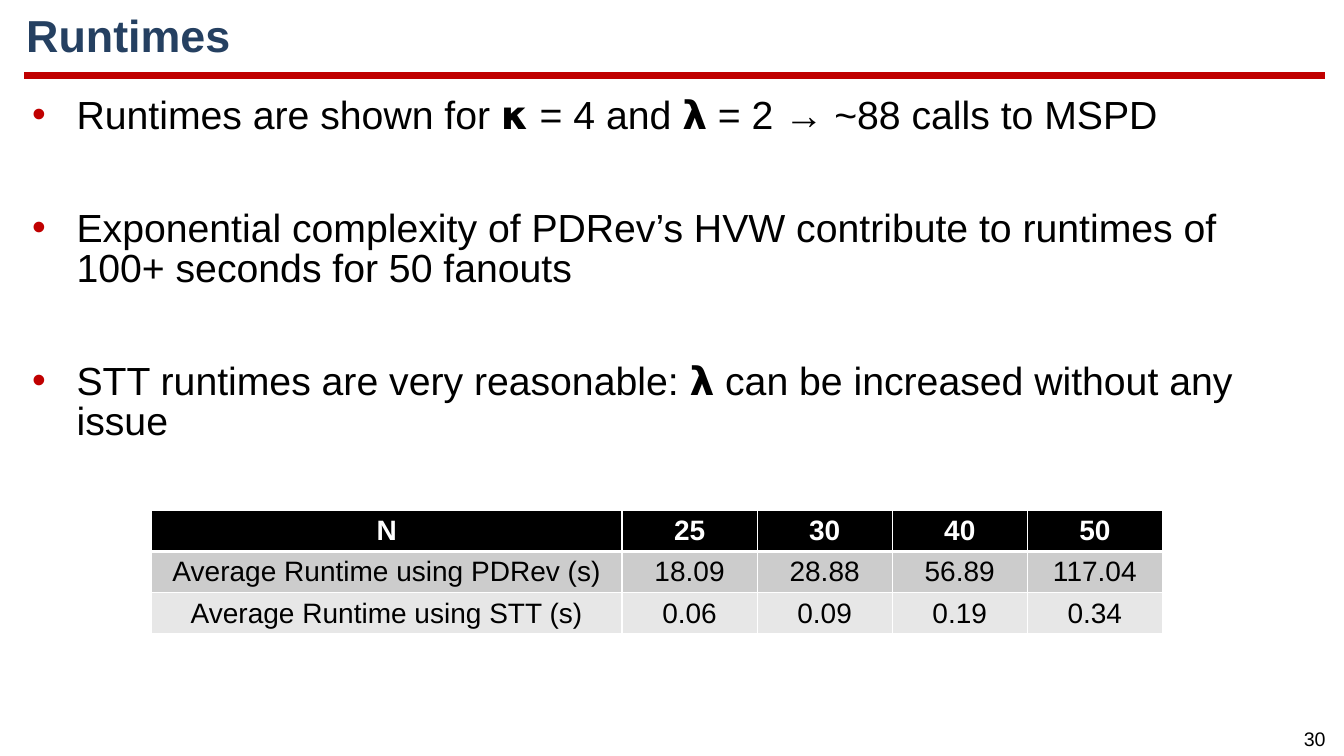
"""Build the runtimes slide with bullets and a runtime table."""
from lxml.etree import SubElement
from pptx import Presentation
from pptx.dml.color import RGBColor
from pptx.enum.shapes import MSO_CONNECTOR
from pptx.enum.text import MSO_ANCHOR, MSO_AUTO_SIZE, PP_ALIGN
from pptx.oxml.ns import qn
from pptx.util import Inches, Pt

TITLE = "Runtimes"
BULLETS = [
    "Runtimes are shown for 𝝹 = 4 and 𝝺 = 2 → ~88 calls to MSPD",
    "Exponential complexity of PDRev’s HVW contribute to runtimes of 100+ seconds for 50 fanouts",
    "STT runtimes are very reasonable: 𝝺 can be increased without any issue",
]
RUNTIMES = [
    ("N", "25", "30", "40", "50"),
    ("Average Runtime using PDRev (s)", "18.09", "28.88", "56.89", "117.04"),
    ("Average Runtime using STT (s)", "0.06", "0.09", "0.19", "0.34"),
]
ROW_FILLS = ["000000", "CCCCCC", "E7E7E7"]
COLUMN_WIDTHS = [4.67] + [1.34] * 4
ROW_HEIGHT = 0.41
PAGE_NUMBER = "30"
RED, NAVY, BLACK, WHITE = "C00000", "254061", "000000", "FFFFFF"


def color(value):
    return RGBColor.from_string(value)


def add_text(paragraph, text, size, text_color, bold=False):
    run = paragraph.add_run()
    run.text = text
    font = run.font
    font.name, font.size, font.bold = "Arial", Pt(size), bold
    font.color.rgb = color(text_color)


def place(shape, left, top, width, height):
    shape.left, shape.top = Inches(left), Inches(top)
    shape.width, shape.height = Inches(width), Inches(height)


def add_bullet(paragraph):
    properties = paragraph._p.get_or_add_pPr()
    properties.set("marL", str(Inches(0.5)))
    properties.set("indent", str(Inches(-0.44)))
    bullet_color = SubElement(properties, qn("a:buClr"))
    SubElement(bullet_color, qn("a:srgbClr"), val=RED)
    SubElement(properties, qn("a:buFont"), typeface="Arial")
    SubElement(properties, qn("a:buChar"), char="•")


def add_borders(cell, bottom_width):
    properties = cell._tc.get_or_add_tcPr()
    for side, width in (("L", 1), ("R", 1), ("T", 1), ("B", bottom_width)):
        border = SubElement(properties, qn(f"a:ln{side}"), w=str(Pt(width)))
        fill = SubElement(border, qn("a:solidFill"))
        SubElement(fill, qn("a:srgbClr"), val=WHITE)


def add_title(slide):
    title = slide.shapes.title
    place(title, 0.16, 0.11, 12.7, 0.54)
    frame = title.text_frame
    frame.auto_size = MSO_AUTO_SIZE.NONE
    frame.vertical_anchor = MSO_ANCHOR.MIDDLE
    paragraph = frame.paragraphs[0]
    paragraph.alignment = PP_ALIGN.LEFT
    paragraph.line_spacing = 0.9
    add_text(paragraph, TITLE, 32, NAVY, bold=True)
    rule = slide.shapes.add_connector(
        MSO_CONNECTOR.STRAIGHT, Inches(0.24), Inches(0.75), Inches(13.14), Inches(0.75))
    rule.line.color.rgb = color(RED)
    rule.line.width = Pt(4.5)
    SubElement(rule._element.spPr, qn("a:effectLst"))


def add_bullets(slide):
    body = slide.placeholders[1]
    place(body, 0.16, 0.92, 12.88, 3.95)
    frame = body.text_frame
    frame.auto_size = MSO_AUTO_SIZE.NONE
    frame.vertical_anchor = MSO_ANCHOR.TOP
    for index, text in enumerate(BULLETS):
        paragraph = frame.add_paragraph() if index else frame.paragraphs[0]
        add_bullet(paragraph)
        paragraph.line_spacing = 0.85
        paragraph.space_before = Pt(52 if index else 0)
        add_text(paragraph, text, 28, BLACK)


def add_runtime_table(slide):
    table = slide.shapes.add_table(
        len(RUNTIMES), len(COLUMN_WIDTHS), Inches(1.5), Inches(5.06),
        Inches(sum(COLUMN_WIDTHS)), Inches(ROW_HEIGHT * len(RUNTIMES))).table
    for column, width in zip(table.columns, COLUMN_WIDTHS):
        column.width = Inches(width)
    for row_index, (values, fill) in enumerate(zip(RUNTIMES, ROW_FILLS)):
        header = row_index == 0
        table.rows[row_index].height = Inches(ROW_HEIGHT)
        for column_index, value in enumerate(values):
            cell = table.cell(row_index, column_index)
            add_borders(cell, 3 if header else 1)
            cell.fill.solid()
            cell.fill.fore_color.rgb = color(fill)
            cell.vertical_anchor = MSO_ANCHOR.MIDDLE
            paragraph = cell.text_frame.paragraphs[0]
            paragraph.alignment = PP_ALIGN.CENTER
            add_text(paragraph, value, 20, WHITE if header else BLACK, bold=header)


def add_page_number(slide):
    box = slide.shapes.add_textbox(Inches(12.87), Inches(7.16), Inches(0.34), Inches(0.34))
    frame = box.text_frame
    frame.word_wrap = True
    frame.margin_left = frame.margin_right = Inches(0.05)
    paragraph = frame.paragraphs[0]
    paragraph.alignment = PP_ALIGN.CENTER
    add_text(paragraph, PAGE_NUMBER, 14, BLACK)


def main():
    presentation = Presentation()
    presentation.slide_width, presentation.slide_height = Inches(13.33), Inches(7.5)
    slide = presentation.slides.add_slide(presentation.slide_layouts[1])
    add_title(slide)
    add_bullets(slide)
    add_runtime_table(slide)
    add_page_number(slide)
    presentation.save("out.pptx")


if __name__ == "__main__":
    main()
